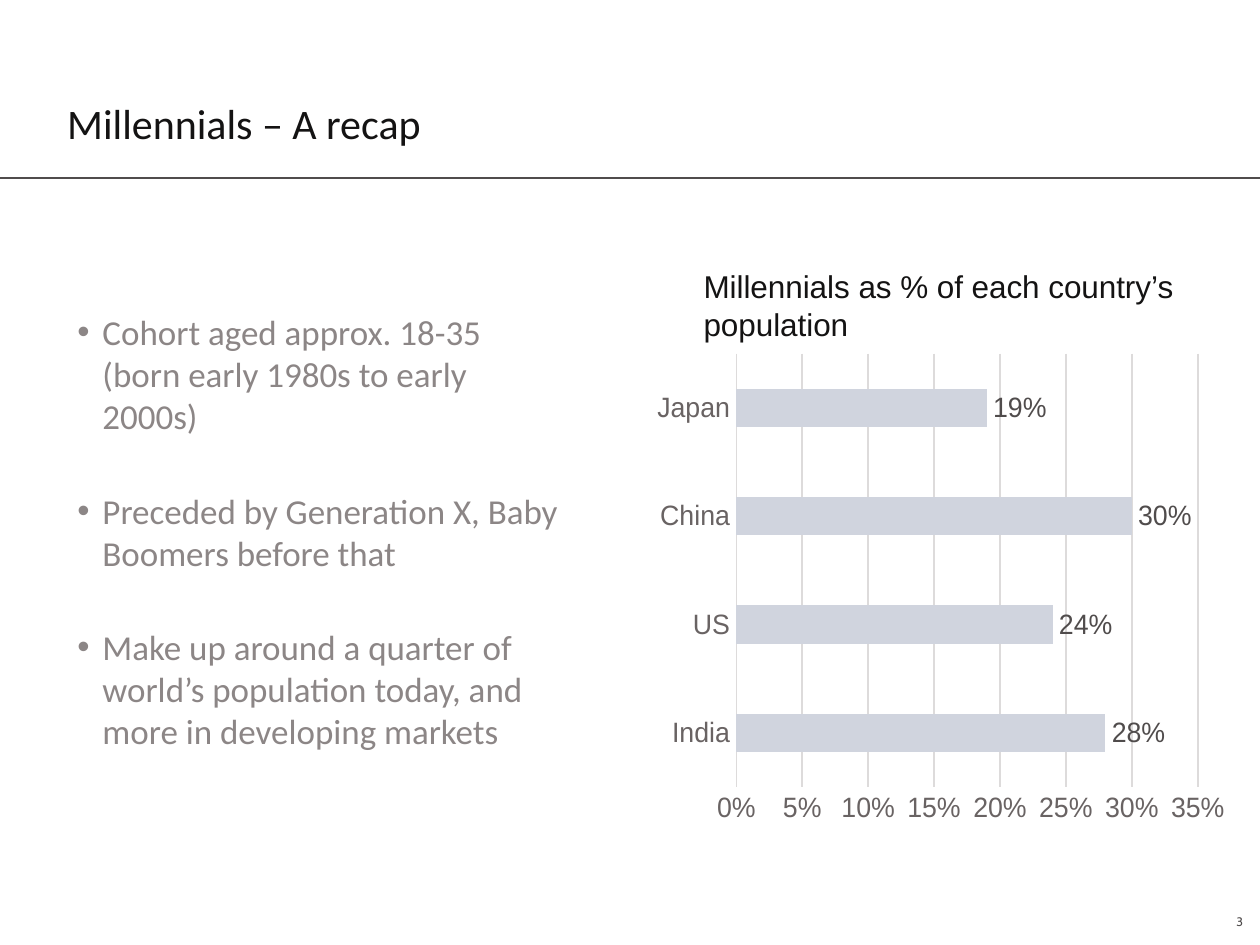
from dataclasses import dataclass
from lxml import etree
from pptx import Presentation
from pptx import oxml
from pptx.chart.data import CategoryChartData
from pptx.dml.color import RGBColor
from pptx.enum import chart as chart_enum, shapes, text
from pptx.oxml import ns
from pptx.util import Inches, Pt


@dataclass(frozen=True)
class Theme:
    ink: str = "141313"
    body: str = "8C8686"
    axis: str = "696363"
    dark: str = "504C4C"
    grid: str = "DDDBDB"
    bar: str = "D0D4DE"
    title_size: float = 18
    body_size: float = 15
    heading_size: float = 13.5
    chart_size: float = 12
    number_size: float = 5.3
    main_font: str = "Calibri"
    chart_font: str = "Arial"
    number_font: str = "Cabin"


theme = Theme()


def style_font(font, name, size, color):
    font.name, font.size, font.bold = name, Pt(size), False
    font.color.rgb = RGBColor.from_string(color)


def fill_frame(shape, box, paragraphs, font, margins=(0, 0, 0, 0)):
    shape.left, shape.top, shape.width, shape.height = map(Inches, box)
    frame = shape.text_frame
    frame.text = "\n".join(paragraphs)
    frame.word_wrap = True
    frame.auto_size = text.MSO_AUTO_SIZE.NONE
    (frame.margin_left, frame.margin_top,
     frame.margin_right, frame.margin_bottom) = map(Inches, margins)
    for paragraph in frame.paragraphs:
        paragraph.alignment = text.PP_ALIGN.LEFT
        style_font(paragraph.runs[0].font, *font)
    return frame


# Slide in 4:3 format
presentation = Presentation()
presentation.slide_width = Inches(7.5)
presentation.slide_height = Inches(7.5 * 3 / 4)
slide = presentation.slides.add_slide(presentation.slide_layouts[1])

# Title and the rule below it
title = fill_frame(slide.shapes.title, (0.4, 0.25, 6.78, 0.63), ["Millennials – A recap"],
                   (theme.main_font, theme.title_size, theme.ink))
title.vertical_anchor = text.MSO_ANCHOR.BOTTOM

rule = slide.shapes.add_connector(shapes.MSO_CONNECTOR.STRAIGHT,
                                  0, Inches(1.06), Inches(7.5), Inches(1.06))
rule.line.color.rgb = RGBColor.from_string(theme.dark)
rule.line.width = Pt(0.5)
etree.SubElement(rule._element.spPr, ns.qn("a:effectLst"))

# Bullet list
bullets = fill_frame(slide.placeholders[1], (0.46, 1.85, 2.9, 2.87), [
    "Cohort aged approx. 18-35 (born early 1980s to early 2000s)",
    "Preceded by Generation X, Baby Boomers before that",
    "Make up around a quarter of world’s population today, and more in developing markets",
], (theme.main_font, theme.body_size, theme.body))
for paragraph in bullets.paragraphs:
    paragraph.space_before, paragraph.space_after = Pt(0), Pt(22.5)
    properties = paragraph._p.get_or_add_pPr()
    properties.set("marL", str(Inches(0.15)))
    properties.set("indent", str(-Inches(0.15)))
    etree.SubElement(properties, ns.qn("a:buChar"), char="•")

# Bar chart
data = CategoryChartData(number_format="0%")
data.categories = ["India", "US", "China", "Japan"]
data.add_series("Series 1", [0.28, 0.24, 0.3, 0.19])
chart = slide.shapes.add_chart(chart_enum.XL_CHART_TYPE.BAR_CLUSTERED, Inches(3.78), Inches(2.1),
                               Inches(3.51), Inches(2.81), data).chart
chart.has_legend = chart.has_title = False
style_font(chart.font, theme.chart_font, theme.chart_size, theme.ink)

for axis in (chart.category_axis, chart.value_axis):
    axis.major_tick_mark = axis.minor_tick_mark = chart_enum.XL_TICK_MARK.NONE
    style_font(axis.tick_labels.font, theme.chart_font, theme.chart_size, theme.axis)
chart.value_axis.minimum_scale, chart.value_axis.maximum_scale = 0, 0.35
chart.value_axis.major_unit = 0.05
chart.value_axis.has_major_gridlines = True
chart.value_axis.tick_labels.number_format = "0%"
chart.value_axis.tick_labels.number_format_is_linked = False
chart.value_axis.format.line.fill.background()
for line in (chart.category_axis.format.line, chart.value_axis.major_gridlines.format.line):
    line.color.rgb = RGBColor.from_string(theme.grid)
    line.width = Pt(0.75)

plot = chart.plots[0]
plot.gap_width = 182
plot.vary_by_categories = False
series = plot.series[0]
series.format.fill.solid()
series.format.fill.fore_color.rgb = RGBColor.from_string(theme.bar)
labels = series.data_labels
labels.show_value = True
labels.number_format, labels.number_format_is_linked = "0%", False
labels.position = chart_enum.XL_LABEL_POSITION.OUTSIDE_END
style_font(labels.font, theme.chart_font, theme.chart_size, theme.dark)

# Fixed inner plot area
plot_area = chart._chartSpace.chart.plotArea
for old_layout in plot_area.findall(ns.qn("c:layout")):
    plot_area.remove(old_layout)
plot_area.insert(0, oxml.parse_xml(
    f'<c:layout {ns.nsdecls("c")}><c:manualLayout><c:layoutTarget val="inner"/>'
    '<c:xMode val="edge"/><c:yMode val="edge"/><c:x val="0.18"/><c:y val="0"/>'
    '<c:w val="0.82"/><c:h val="0.92"/></c:manualLayout></c:layout>'))

# Chart heading
heading = slide.shapes.add_textbox(0, 0, 0, 0)
fill_frame(heading, (4.09, 1.54, 3.3, 0.56), ["Millennials as % of each country’s population"],
           (theme.chart_font, theme.heading_size, theme.ink), (0.1, 0.05, 0.1, 0.05))

# Slide number
number = fill_frame(slide.shapes.add_textbox(0, 0, 0, 0), (7.13, 5.4, 0.27, 0.17), ["3"],
                    (theme.number_font, theme.number_size, theme.dark))
number.vertical_anchor = text.MSO_ANCHOR.MIDDLE
number.paragraphs[0].alignment = text.PP_ALIGN.RIGHT

presentation.save("out.pptx")
